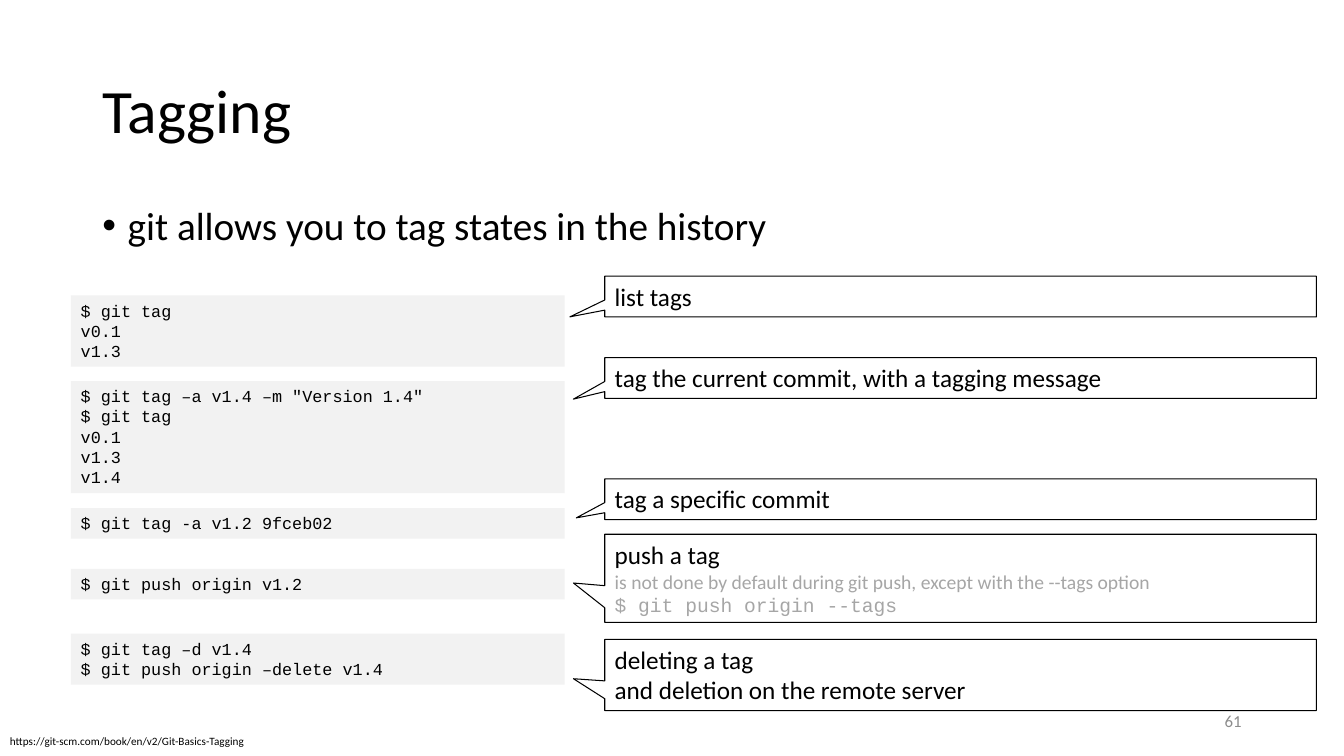
from pptx import Presentation
from pptx.dml.color import RGBColor
from pptx.enum.shapes import MSO_SHAPE
from pptx.enum.text import MSO_ANCHOR, PP_ALIGN
from pptx.util import Pt

COLORS = {"ink": "000000", "code": "F2F2F2", "page": "8C8C8C", "hint": "A6A6A6"}
SANS, MONO = "Calibri", "Courier New"


def write(shape, lines, size, face=SANS, color="ink", align=PP_ALIGN.LEFT):
    """Fill a shape with one paragraph per line, all in one style."""
    frame = shape.text_frame
    frame.word_wrap = True
    frame.text = "\n".join(lines)
    for par in frame.paragraphs:
        par.alignment = align
        par.font.size = Pt(size)
        par.font.name = face
        par.font.color.rgb = RGBColor.from_string(COLORS[color])
    return frame


def place(shape, left, top, width, height):
    shape.left, shape.top = Pt(left), Pt(top)
    shape.width, shape.height = Pt(width), Pt(height)


deck = Presentation()
deck.slide_width, deck.slide_height = Pt(960), Pt(540)
slide = deck.slides.add_slide(deck.slide_layouts[1])
shapes = slide.shapes

# Title and bullet
title, body = slide.placeholders
place(title, 66, 28.75, 828, 104.4)
frame = write(title, ["Tagging"], 44)
frame.vertical_anchor = MSO_ANCHOR.MIDDLE
frame.paragraphs[0].line_spacing = 0.9

place(body, 66, 143.75, 828, 342.6)
frame = write(body, ["git allows you to tag states in the history"], 28)
point = frame.paragraphs[0]
point.line_spacing = 0.9
point.space_before = Pt(10)
props = point._p.get_or_add_pPr()
props.set("marL", str(Pt(18)))
props.set("indent", str(Pt(-18)))

# Page number and web address
page = shapes.add_textbox(Pt(678), Pt(500.5), Pt(216), Pt(28.75))
frame = write(page, ["61"], 12, color="page", align=PP_ALIGN.RIGHT)
frame.vertical_anchor = MSO_ANCHOR.MIDDLE
link = shapes.add_textbox(Pt(0), Pt(521.3), Pt(480), Pt(17))
write(link, ["https://git-scm.com/book/en/v2/Git-Basics-Tagging"], 8)

# Commands: top, height, lines
codes = [
    (211, 50.9, ["$ git tag", "v0.1", "v1.3"]),
    (272.2, 80, ['$ git tag –a v1.4 –m "Version 1.4"', "$ git tag",
                 "v0.1", "v1.3", "v1.4"]),
    (363, 21.8, ["$ git tag -a v1.2 9fceb02"]),
    (406.3, 21.8, ["$ git push origin v1.2"]),
    (452.7, 36.4, ["$ git tag –d v1.4", "$ git push origin –delete v1.4"]),
]
for top, height, lines in codes:
    box = shapes.add_shape(MSO_SHAPE.RECTANGLE, Pt(50.6), Pt(top), Pt(352.8), Pt(height))
    box.shadow.inherit = False
    box.fill.solid()
    box.fill.fore_color.rgb = RGBColor.from_string(COLORS["code"])
    box.line.fill.background()
    write(box, lines, 12, MONO).vertical_anchor = MSO_ANCHOR.TOP

# Callouts: top, height, tip across, tip down, lines
notes = [
    (197.3, 29.1, -0.549, 0.498, ["list tags"]),
    (255.5, 29.1, -0.544, 0.517, ["tag the current commit, with a tagging message"]),
    (342, 29.1, -0.54, 0.459, ["tag a specific commit"]),
    (381.6, 63, -0.544, 0.053, [
        "push a tag",
        "is not done by default during git push, except with the --tags option",
        "$ git push origin --tags"]),
    (456.7, 50.9, -0.544, 0.053, ["deleting a tag", "and deletion on the remote server"]),
]
for top, height, across, down, lines in notes:
    note = shapes.add_shape(MSO_SHAPE.RECTANGULAR_CALLOUT, Pt(432), Pt(top), Pt(508.3), Pt(height))
    note.adjustments[0], note.adjustments[1] = across, down
    note.shadow.inherit = False
    note.fill.background()
    note.line.color.rgb = RGBColor.from_string(COLORS["ink"])
    note.line.width = Pt(0.75)
    frame = write(note, lines, 18)
    frame.vertical_anchor = MSO_ANCHOR.TOP
    if lines[0] == "push a tag":
        for par, face in zip(frame.paragraphs[1:], (SANS, MONO)):
            par.font.size = Pt(14)
            par.font.name = face
            par.font.color.rgb = RGBColor.from_string(COLORS["hint"])

deck.save("out.pptx")
